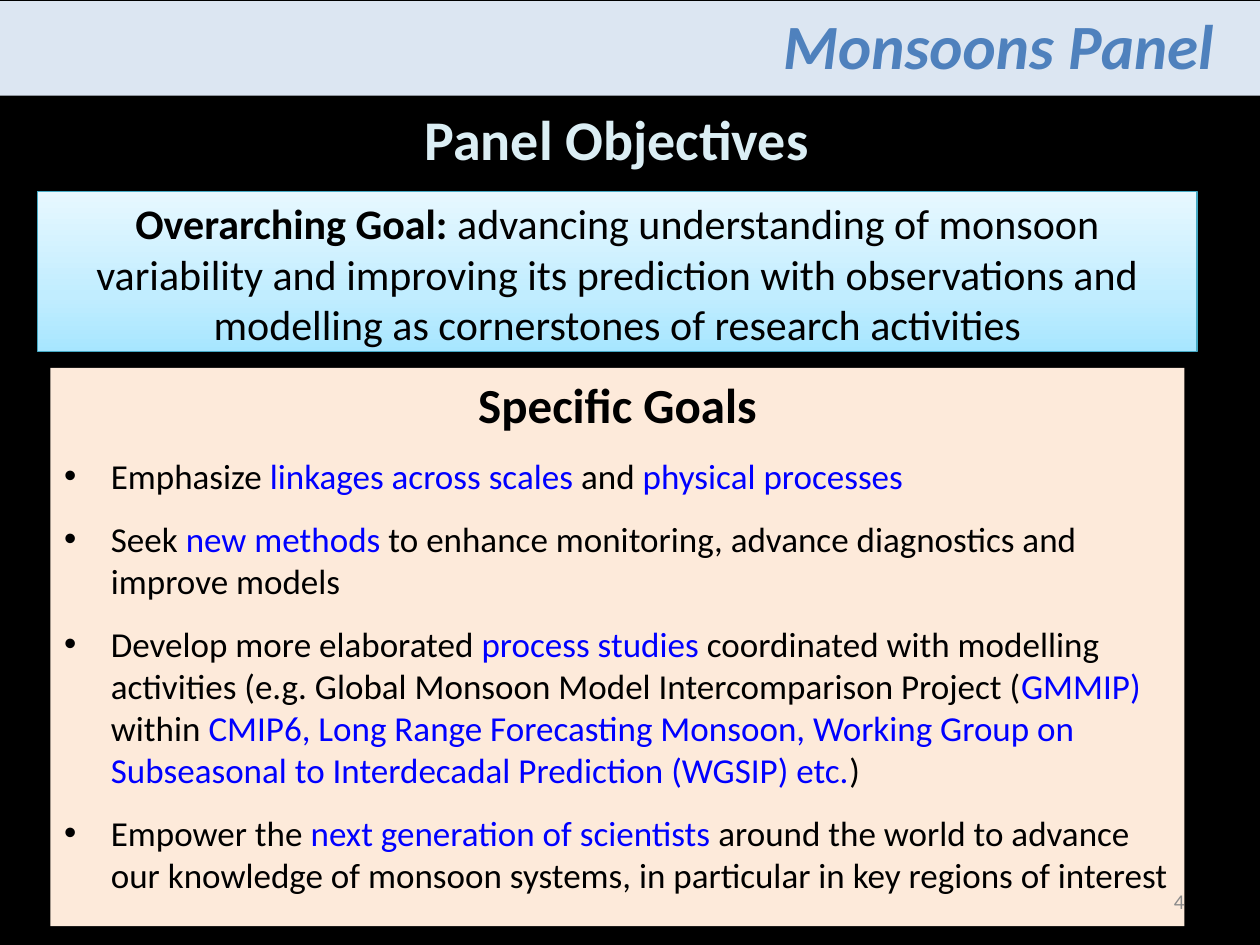
from copy import deepcopy

from lxml import etree
from pptx import Presentation
from pptx.dml.color import RGBColor
from pptx.enum.shapes import MSO_SHAPE
from pptx.enum.text import MSO_ANCHOR, MSO_AUTO_SIZE, PP_ALIGN
from pptx.oxml.ns import qn
from pptx.util import Inches, Pt

RECTANGLE = MSO_SHAPE.RECTANGLE
TOP, MIDDLE = MSO_ANCHOR.TOP, MSO_ANCHOR.MIDDLE
NO_FIT = MSO_AUTO_SIZE.NONE
CENTER, RIGHT, LEFT = PP_ALIGN.CENTER, PP_ALIGN.RIGHT, PP_ALIGN.LEFT

BLACK = RGBColor(0x00, 0x00, 0x00)
BLUE = RGBColor(0x00, 0x00, 0xFF)
BANNER_FILL = RGBColor(0xDC, 0xE6, 0xF2)
BANNER_TEXT = RGBColor(0x4F, 0x81, 0xBD)
TITLE_TEXT = RGBColor(0xDB, 0xEE, 0xF4)
GOALS_FILL = RGBColor(0xFD, 0xEA, 0xDA)
NUMBER_TEXT = RGBColor(0x8B, 0x8B, 0x8B)
GOAL_LINE = RGBColor(0x46, 0xAA, 0xC5)
GOAL_STOPS = (
    (0, RGBColor(0xA7, 0xE6, 0xFF)),
    (0.35, RGBColor(0xC1, 0xED, 0xFF)),
    (1, RGBColor(0xE7, 0xF8, 0xFF)),
)

FONT = "Calibri"
CELL = Inches(0.1)
COLUMNS, ROWS = 100, 75

OVERARCHING = (
    "advancing understanding of monsoon variability and improving its prediction "
    "with observations and modelling as cornerstones of research activities"
)
GOALS = (
    "Emphasize *linkages across scales* and *physical processes*",
    "Seek *new methods* to enhance monitoring, advance diagnostics and improve models",
    "Develop more elaborated *process studies* coordinated with modelling activities "
    "(e.g. Global Monsoon Model Intercomparison Project (*GMMIP)* within *CMIP6, "
    "Long Range Forecasting Monsoon, Working Group on Subseasonal to Interdecadal "
    "Prediction (WGSIP) etc.*)",
    "Empower the *next generation of scientists* around the world to advance our "
    "knowledge of monsoon systems, in particular in key regions of interest",
)


def cells(box):
    """Turn a box in grid columns and rows into lengths."""
    return [round(part * CELL) for part in box]


def place(shape, box):
    """Move a placeholder to a box on the grid."""
    shape.left, shape.top, shape.width, shape.height = cells(box)


def set_frame(shape, anchor, wrap=True):
    """Fix the anchor and wrapping of a shape's text and return its frame."""
    frame = shape.text_frame
    frame.auto_size = NO_FIT
    frame.word_wrap = wrap
    frame.vertical_anchor = anchor
    return frame


def set_font(para, size, color, align, bold=False, italic=False):
    """Format a whole paragraph."""
    para.alignment = align
    font = para.font
    font.name, font.size, font.bold, font.italic = FONT, Pt(size), bold, italic
    font.color.rgb = color


def add_label(page, box, text, *style, **options):
    """Add a one-line text box centred vertically in its box."""
    frame = set_frame(page.shapes.add_textbox(*cells(box)), MIDDLE)
    para = frame.paragraphs[0]
    para.text = text
    set_font(para, *style, **options)
    return frame


def add_banner(page, box):
    """Draw the band across the top with the panel's name at its right."""
    left, top, width, height = box
    band = page.shapes.add_shape(RECTANGLE, *cells(box))
    band.shadow.inherit = False
    band.fill.solid()
    band.fill.fore_color.rgb = BANNER_FILL
    band.line.fill.background()
    label_box = (left + 0.609 * width, top + 0.3, 0.367 * width, 0.84 * height)
    frame = add_label(page, label_box, "Monsoons Panel", 36, BANNER_TEXT, CENTER,
                      bold=True, italic=True)
    frame.margin_top = frame.margin_bottom = 0
    frame.word_wrap = False


def fill_title(page, box):
    """Place and format the slide title."""
    title = page.shapes.title
    place(title, box)
    para = set_frame(title, MIDDLE, wrap=False).paragraphs[0]
    para.text = "Panel Objectives"
    set_font(para, 32, TITLE_TEXT, CENTER, bold=True)


def set_bullet(para, mark=None):
    """Give a paragraph a hanging bullet, or none at all."""
    props = para._p.get_or_add_pPr()
    props.set("marL", str(Inches(0.38) if mark else 0))
    props.set("indent", str(Inches(-0.37) if mark else 0))
    if mark:
        color = etree.SubElement(props, qn("a:buClr"))
        etree.SubElement(color, qn("a:srgbClr"), val=str(BLACK))
        etree.SubElement(props, qn("a:buFont"), typeface="Arial")
        etree.SubElement(props, qn("a:buChar"), char=mark)
    else:
        etree.SubElement(props, qn("a:buNone"))


def fill_goals(page, box):
    """Fill the body with a heading and the bulleted specific goals."""
    body = page.placeholders[1]
    place(body, box)
    body.fill.solid()
    body.fill.fore_color.rgb = GOALS_FILL
    frame = set_frame(body, TOP)
    heading = frame.paragraphs[0]
    heading.text = "Specific Goals"
    set_bullet(heading)
    set_font(heading, 28, BLACK, CENTER, bold=True)
    for goal in GOALS:
        para = frame.add_paragraph()
        set_bullet(para, "•")
        set_font(para, 20, BLACK, LEFT)
        for index, part in enumerate(goal.split("*")):
            span = para.add_run()
            span.text = part
            if index % 2:
                span.font.color.rgb = BLUE
    for para in frame.paragraphs:
        para.space_before, para.space_after = Pt(0), Pt(12)


def fill_gradient(shape, stops, angle):
    """Fill a shape with a linear gradient of any number of stops."""
    shape.fill.gradient()
    shape.fill.gradient_angle = angle
    stop_list = shape._element.spPr.find(".//" + qn("a:gsLst"))
    while len(stop_list) < len(stops):
        stop_list.append(deepcopy(stop_list[0]))
    for stop, (position, color) in zip(shape.fill.gradient_stops, stops):
        stop.position = position
        stop.color.rgb = color


def add_shadow(shape):
    """Cast a soft shadow straight down."""
    shape.shadow.inherit = False
    effects = shape._element.spPr.find(qn("a:effectLst"))
    shadow = etree.SubElement(
        effects, qn("a:outerShdw"), blurRad=str(Pt(3.1)), dist=str(Pt(1.6)),
        dir="5400000", rotWithShape="0")
    color = etree.SubElement(shadow, qn("a:srgbClr"), val=str(BLACK))
    etree.SubElement(color, qn("a:alpha"), val="38000")


def add_overarching_goal(page, box):
    """Draw the shaded box that states the overarching goal."""
    panel = page.shapes.add_shape(RECTANGLE, *cells(box))
    fill_gradient(panel, GOAL_STOPS, 90)
    panel.line.color.rgb = GOAL_LINE
    panel.line.width = Pt(0.75)
    add_shadow(panel)
    para = set_frame(panel, TOP).paragraphs[0]
    set_font(para, 24, BLACK, CENTER)
    lead = para.add_run()
    lead.text = "Overarching Goal: "
    lead.font.bold = True
    para.add_run().text = OVERARCHING


def main():
    """Build the slide and save it."""
    deck = Presentation()
    deck.slide_width, deck.slide_height = COLUMNS * CELL, ROWS * CELL
    page = deck.slides.add_slide(deck.slide_layouts[1])
    page.background.fill.solid()
    page.background.fill.fore_color.rgb = BLACK
    add_banner(page, (0, 0.1, COLUMNS, 7.5))
    fill_title(page, (30.4, 8, 37.1, 5.9))
    fill_goals(page, (4, 29.2, 90, 44.3))
    add_label(page, (71.7, 69.5, 23.3, 4), "4", 12, NUMBER_TEXT, RIGHT)
    add_overarching_goal(page, (3, 15.2, 92, 12.7))
    deck.save("out.pptx")


if __name__ == "__main__":
    main()
